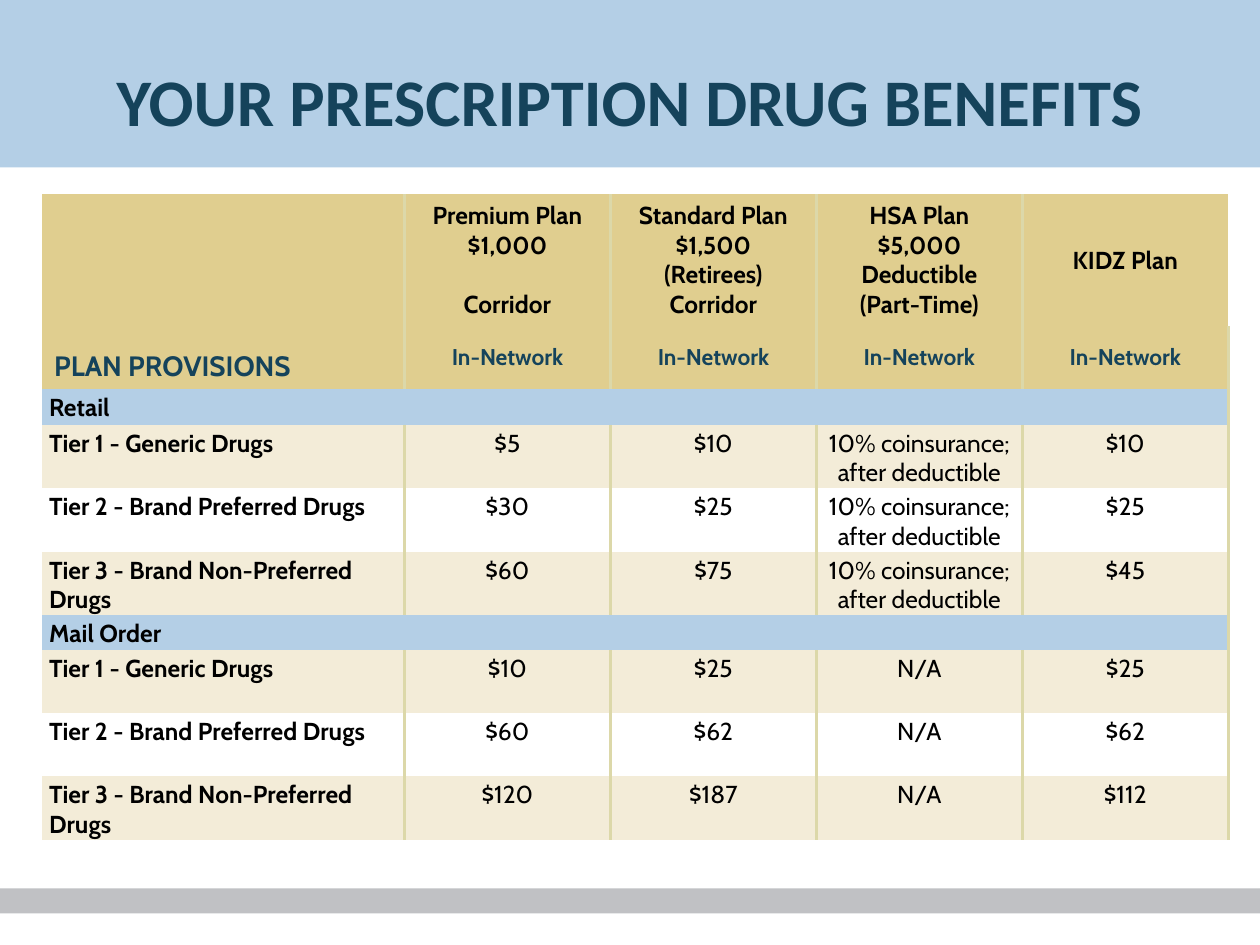
from dataclasses import dataclass

from lxml.etree import SubElement
from pptx import Presentation
from pptx.dml.color import RGBColor
from pptx.enum.shapes import MSO_SHAPE
from pptx.enum.text import MSO_ANCHOR, PP_ALIGN
from pptx.oxml.ns import qn
from pptx.util import Inches, Pt


@dataclass(frozen=True)
class Theme:
    navy: str = "15435B"
    black: str = "000000"
    white: str = "FFFFFF"
    blue: str = "B4CFE6"
    gold: str = "E0CE8F"
    cream: str = "F3ECD8"
    gray: str = "C0C1C4"
    divider: str = "DCD8A9"
    title_font: str = "Calibri"
    body_font: str = "Cabin"
    title_size: float = 38
    provisions_size: float = 16
    body_size: float = 14
    network_size: float = 13
    divider_width: float = 2.25
    no_grid_style: str = "{2D5ABB26-0587-4C30-8999-92F81FD0307C}"


class BenefitsSlide:
    def __init__(self, presentation, theme):
        self.theme = theme
        self.slide = presentation.slides.add_slide(presentation.slide_layouts[5])

    def add_lines(self, frame, lines, size, color, font, bold=True,
                  align=PP_ALIGN.CENTER, gap=0):
        """Add one paragraph a line, with a gap between paragraphs."""
        for index, line in enumerate(lines):
            paragraph = frame.add_paragraph() if index else frame.paragraphs[0]
            paragraph.alignment = align
            if index and gap:
                paragraph.space_before = Pt(gap)
            run = paragraph.add_run()
            run.text = line
            style = {"size": Pt(size), "name": font, "bold": bold}
            for name, value in style.items():
                setattr(run.font, name, value)
            run.font.color.rgb = RGBColor.from_string(color)

    def band(self, top, height, color):
        band = self.slide.shapes.add_shape(
            MSO_SHAPE.RECTANGLE, 0, Inches(top), Inches(10), Inches(height))
        band.shadow.inherit = False
        band.fill.solid()
        band.fill.fore_color.rgb = RGBColor.from_string(color)
        band.line.fill.background()

    def title(self, text):
        title = self.slide.shapes.title
        place = {"left": 0, "top": Inches(0.25),
                 "width": Inches(10), "height": Inches(1.08)}
        for name, value in place.items():
            setattr(title, name, value)
        title.text_frame.vertical_anchor = MSO_ANCHOR.MIDDLE
        self.add_lines(title.text_frame, [text], self.theme.title_size,
                       self.theme.navy, self.theme.title_font)
        # Bring the title in front of the band
        title.element.getparent().append(title.element)

    def table(self, left, top, widths, heights):
        table = self.slide.shapes.add_table(
            len(heights), len(widths), Inches(left), Inches(top),
            Inches(sum(widths)), Inches(sum(heights))).table
        for column, width in zip(table.columns, widths):
            column.width = Inches(width)
        for row, height in zip(table.rows, heights):
            row.height = Inches(height)
        table.first_row = table.horz_banding = False
        style_id = table._tbl.tblPr.find(qn("a:tableStyleId"))
        style_id.text = self.theme.no_grid_style
        return table

    def cell(self, cell, lines, fill, sides="LR", size=None, color=None,
             bold=True, align=PP_ALIGN.CENTER, anchor=MSO_ANCHOR.TOP,
             margins=(0, 0.03, 0, 0), gap=0):
        theme = self.theme
        for side, margin in zip(("left", "top", "right", "bottom"), margins):
            setattr(cell, f"margin_{side}", Inches(margin))
        cell.vertical_anchor = anchor
        # Borders come before the fill in the cell properties
        properties = cell._tc.get_or_add_tcPr()
        for side in sides:
            border = SubElement(properties, qn(f"a:ln{side}"),
                                w=str(int(Pt(theme.divider_width))))
            solid = SubElement(border, qn("a:solidFill"))
            SubElement(solid, qn("a:srgbClr"), val=theme.divider)
        cell.fill.solid()
        cell.fill.fore_color.rgb = RGBColor.from_string(fill)
        self.add_lines(cell.text_frame, lines, size or theme.body_size,
                       color or theme.black, theme.body_font, bold, align, gap)


COINSURANCE = "10% coinsurance; after deductible"
TIERS = ["Tier 1 - Generic Drugs", "Tier 2 - Brand Preferred Drugs",
         "Tier 3 - Brand Non-Preferred Drugs"]
SECTIONS = {
    "Retail": [["$5", "$10", COINSURANCE, "$10"],
               ["$30", "$25", COINSURANCE, "$25"],
               ["$60", "$75", COINSURANCE, "$45"]],
    "Mail Order": [["$10", "$25", "N/A", "$25"],
                   ["$60", "$62", "N/A", "$62"],
                   ["$120", "$187", "N/A", "$112"]],
}
# Plan heading lines and the gap between them in points
PLANS = [
    (["Premium Plan $1,000", "Corridor"], 17),
    (["Standard Plan $1,500", "(Retirees)", "Corridor"], 0),
    (["HSA Plan", "$5,000 Deductible", "(Part-Time)"], 0),
    (["KIDZ Plan"], 0),
]


def main():
    theme = Theme()
    presentation = Presentation()
    presentation.slide_width, presentation.slide_height = Inches(10), Inches(7.5)
    page = BenefitsSlide(presentation, theme)

    # Bands and title
    page.band(7.05, 0.2, theme.gray)
    page.band(0, 1.33, theme.blue)
    page.title("YOUR PRESCRIPTION DRUG BENEFITS")

    # Benefits grid
    label_width, table_width = 2.88, 9.42
    plan_width = (table_width - label_width) / len(PLANS)
    section_heights = [0.28] + [0.5] * len(TIERS)
    benefits = page.table(0.33, 1.54, [label_width] + [plan_width] * len(PLANS),
                          [1.05, 0.5] + section_heights * len(SECTIONS))

    # Plan headings
    heading = {"fill": theme.gold, "margins": (0.1, 0.05, 0.1, 0.05)}
    provisions = benefits.cell(0, 0)
    provisions.merge(benefits.cell(1, 0))
    page.cell(provisions, ["PLAN PROVISIONS"], sides="R", color=theme.navy,
              size=theme.provisions_size, align=PP_ALIGN.LEFT,
              anchor=MSO_ANCHOR.BOTTOM, **heading)
    for column, (lines, gap) in enumerate(PLANS, start=1):
        sides = "L" if column == len(PLANS) else "LR"
        page.cell(benefits.cell(0, column), lines, sides=sides, gap=gap,
                  anchor=MSO_ANCHOR.MIDDLE, **heading)
        page.cell(benefits.cell(1, column), ["In-Network"], color=theme.navy,
                  size=theme.network_size, anchor=MSO_ANCHOR.MIDDLE, **heading)

    # Sections with one row for each tier
    label = {"sides": "R", "align": PP_ALIGN.LEFT, "margins": (0.06, 0.03, 0, 0)}
    row = 2
    for section, tier_costs in SECTIONS.items():
        section_cell = benefits.cell(row, 0)
        section_cell.merge(benefits.cell(row, len(PLANS)))
        page.cell(section_cell, [section], theme.blue, **label)
        for index, (tier, costs) in enumerate(zip(TIERS, tier_costs)):
            row += 1
            fill = theme.white if index % 2 else theme.cream
            page.cell(benefits.cell(row, 0), [tier], fill, **label)
            for column, cost in enumerate(costs, start=1):
                page.cell(benefits.cell(row, column), [cost], fill, bold=False)
        row += 1

    presentation.save("out.pptx")


if __name__ == "__main__":
    main()
